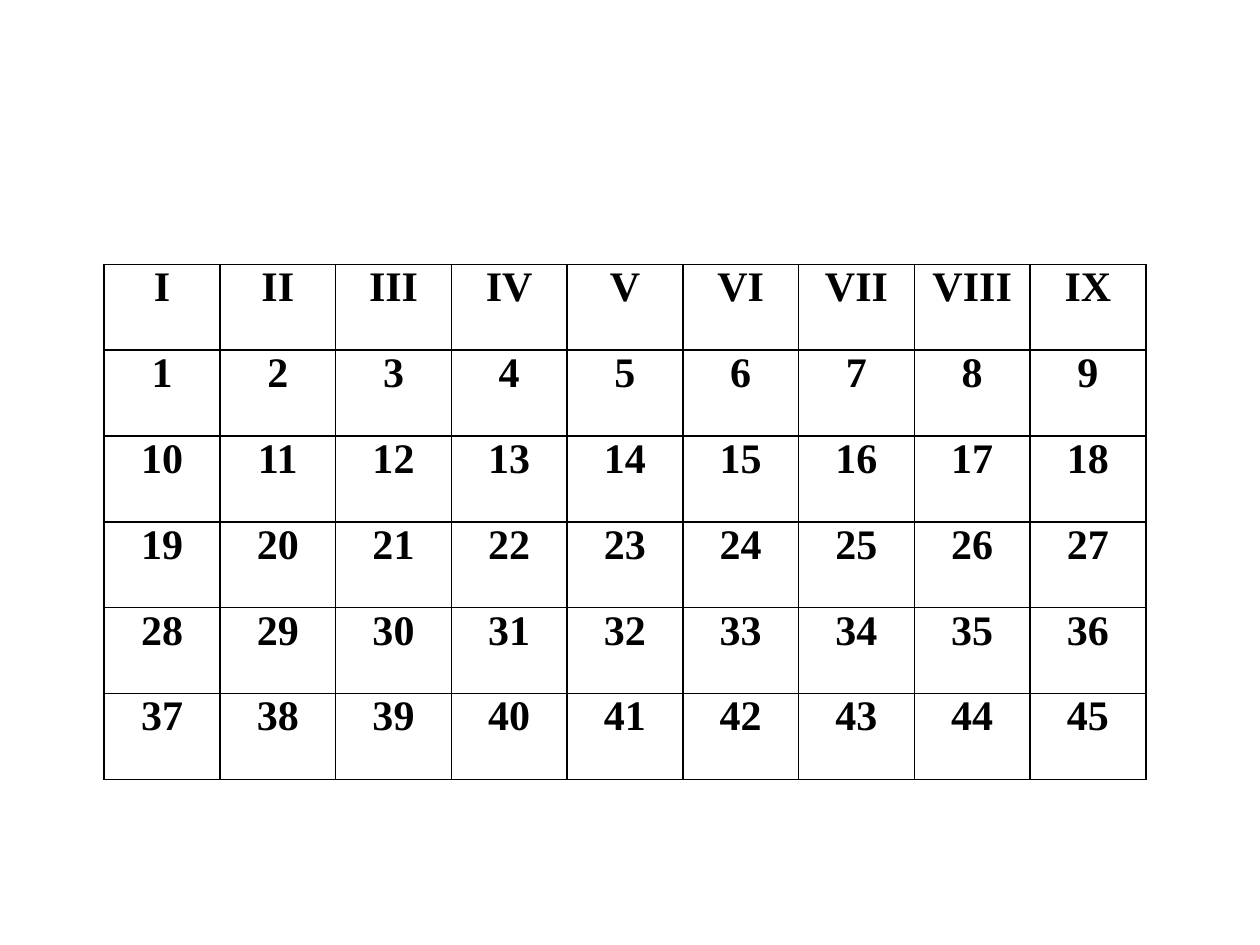
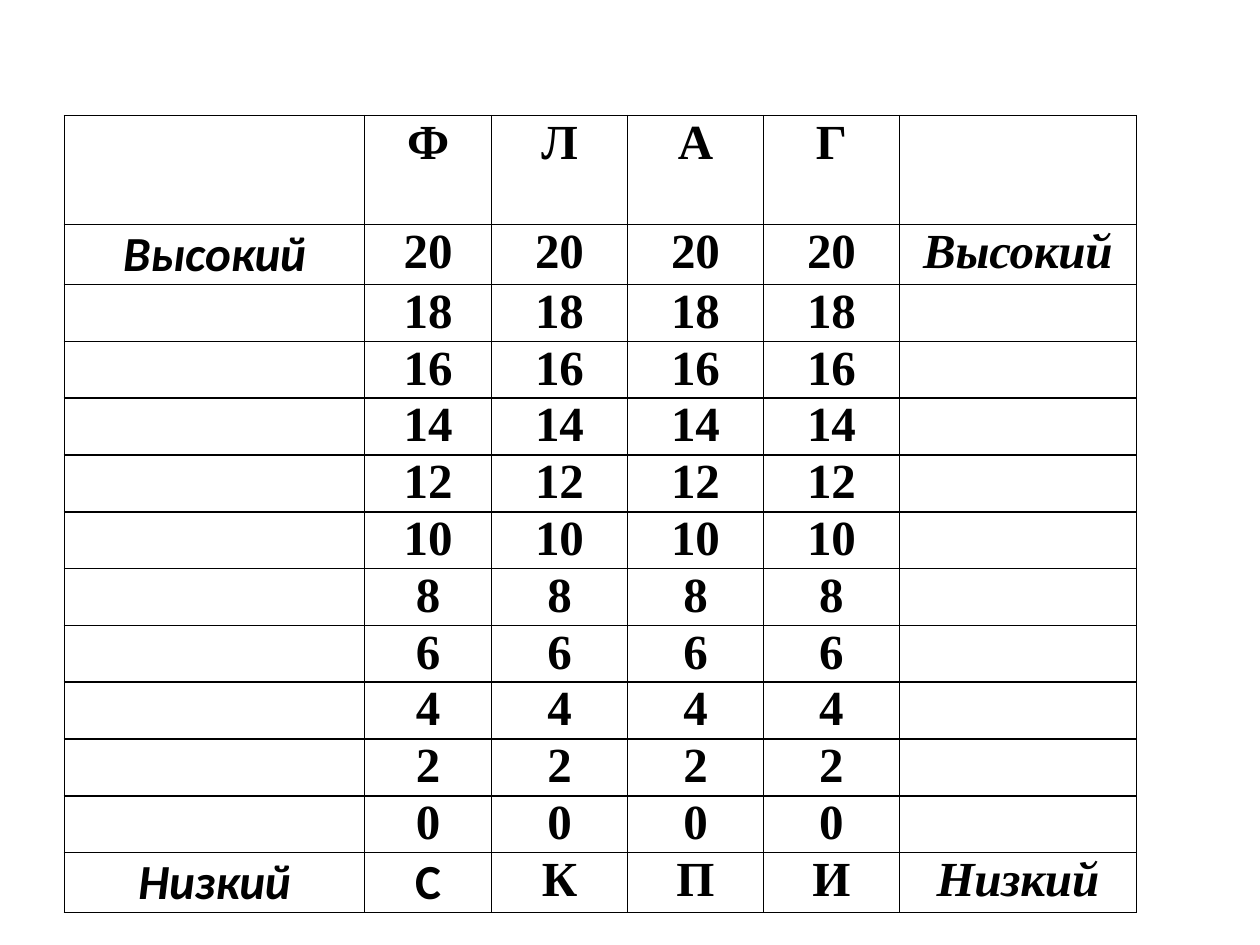
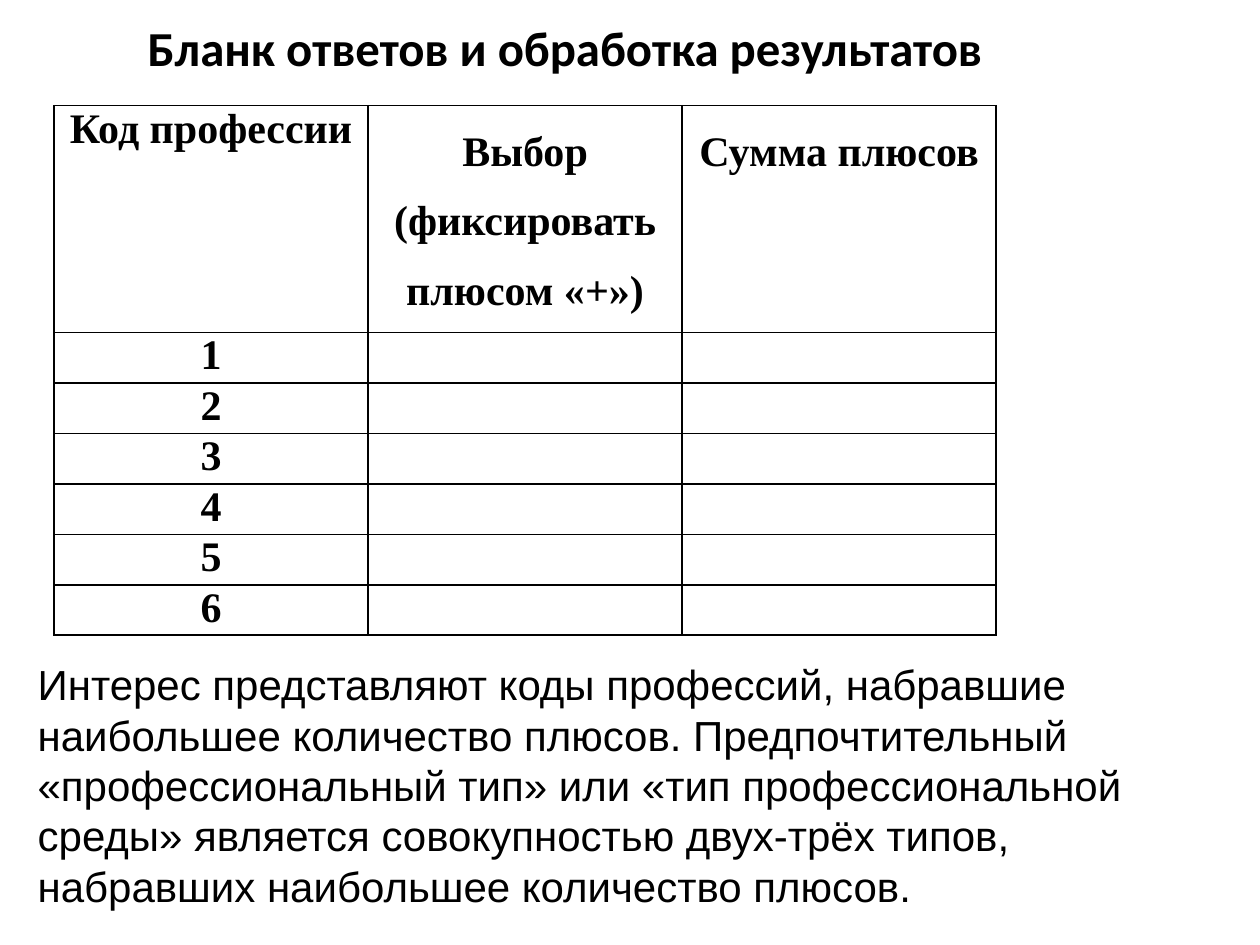
from pptx import Presentation
from pptx.dml.color import RGBColor
from pptx.enum.text import MSO_ANCHOR, PP_ALIGN
from pptx.oxml.xmlchemy import OxmlElement
from pptx.util import Cm, Pt

COLOURS = {"ink": "000000", "rule": "000000"}
SERIF, SANS, BODY = "Times New Roman", "Calibri", "Arial"


def add_run(paragraph, text, size, font=SERIF, bold=True, italic=False, spacing=0):
    """Add one formatted run to a paragraph."""
    run = paragraph.add_run()
    run.text = text
    run.font.size = Pt(size)
    run.font.name = font
    run.font.bold = bold
    run.font.italic = italic
    run.font.color.rgb = RGBColor.from_string(COLOURS["ink"])
    if spacing:
        run.font._element.set("spc", str(spacing))


def rule_cell(cell):
    """Draw a thin line on all four sides of a cell."""
    properties = cell._tc.get_or_add_tcPr()
    for side in ("a:lnL", "a:lnR", "a:lnT", "a:lnB"):
        line = OxmlElement(side)
        line.set("w", str(Pt(1)))
        fill = OxmlElement("a:solidFill")
        colour = OxmlElement("a:srgbClr")
        colour.set("val", COLOURS["rule"])
        fill.append(colour)
        line.append(fill)
        properties.append(line)


def fill_cell(cell, content, size, spacing):
    """Rule a cell and write its text, given as a string or (text, options)."""
    rule_cell(cell)
    cell.fill.background()
    cell.margin_left = cell.margin_right = Cm(0.19)
    cell.margin_top = cell.margin_bottom = 0
    text, options = (content, {}) if isinstance(content, str) else content
    if not text:
        return
    run_options = dict(options)
    paragraph = cell.text_frame.paragraphs[0]
    paragraph.alignment = PP_ALIGN.CENTER
    paragraph.line_spacing = run_options.pop("line_spacing", None)
    add_run(paragraph, text, size, spacing=spacing, **run_options)


def add_grid(slide, left, top, widths, heights, rows, size, spacing=0):
    """Add a ruled table with the given column widths and row heights in cm."""
    frame = slide.shapes.add_table(
        len(heights), len(widths), Cm(left), Cm(top), Cm(sum(widths)), Cm(sum(heights)))
    grid = frame.table
    grid.first_row = grid.horz_banding = False
    for column, width in zip(grid.columns, widths):
        column.width = Cm(width)
    for line, height, contents in zip(grid.rows, heights, rows):
        line.height = Cm(height)
        for cell, content in zip(line.cells, contents):
            fill_cell(cell, content, size, spacing)


def add_text(slide, left, top, width, height, text, align=PP_ALIGN.LEFT, **style):
    """Add a wrapping text box whose text is vertically centred."""
    frame = slide.shapes.add_textbox(Cm(left), Cm(top), Cm(width), Cm(height)).text_frame
    frame.word_wrap = True
    frame.vertical_anchor = MSO_ANCHOR.MIDDLE
    paragraph = frame.paragraphs[0]
    paragraph.alignment = align
    add_run(paragraph, text, **style)


def build_number_sheet(slide):
    """Build the numbered answer grid under Roman headings."""
    headings = ["I", "II", "III", "IV", "V", "VI", "VII", "VIII", "IX"]
    count = len(headings)
    numbers = [[str(first + step) for step in range(count)]
               for first in range(1, 46, count)]
    add_grid(slide, 2.1, 5.33, [21 / count] * count, [1.73] * 6,
             [headings] + numbers, size=24)


def build_level_scale(slide):
    """Build the scale from high to low for four pairs of letters."""
    sans_italic, serif_italic = {"font": SANS, "italic": True}, {"italic": True}
    levels = [["", *[str(score)] * 4, ""] for score in range(20, -1, -2)]
    levels[0][0] = ("Высокий", sans_italic)
    levels[0][-1] = ("Высокий", serif_italic)
    lowest = [("Низкий", sans_italic), ("С", {"font": SANS}), "К", "П", "И",
              ("Низкий", serif_italic)]
    add_grid(slide, 1.3, 2.33, [6.05, 2.56, 2.74, 2.74, 2.74, 4.78],
             [2.2, 1.2] + [1.145] * 10 + [1.2],
             [["", "Ф", "Л", "А", "Г", ""], *levels, lowest], size=28, spacing=-10)


def build_answer_form(slide):
    """Build the answer form with its title and explanation."""
    add_text(slide, 0.89, 0.15, 21, 1.6, "Бланк ответов и обработка результатов",
             PP_ALIGN.CENTER, size=27.9, font=SANS)
    spaced = {"line_spacing": 1.5}
    headings = ["Код профессии", ("Выбор (фиксировать плюсом «+»)", spaced),
                ("Сумма плюсов", spaced)]
    codes = [[str(code), "", ""] for code in range(1, 7)]
    add_grid(slide, 1.09, 2.13, [6.33] * 3, [4.22] + [0.94] * 6,
             [headings, *codes], size=24)
    add_text(slide, 0.51, 13.13, 24.31, 5.38,
             "Интерес представляют коды профессий, набравшие наибольшее количество "
             "плюсов. Предпочтительный «профессиональный тип» или «тип "
             "профессиональной среды» является совокупностью двух-трёх типов, "
             "набравших наибольшее количество плюсов.",
             size=24, font=BODY, bold=False)


def main():
    """Build and save the presentation."""
    presentation = Presentation()
    presentation.slide_width = Cm(25.4)
    presentation.slide_height = Cm(19.05)
    blank = presentation.slide_layouts[6]
    for build in (build_number_sheet, build_level_scale, build_answer_form):
        build(presentation.slides.add_slide(blank))
    presentation.save("out.pptx")


if __name__ == "__main__":
    main()
